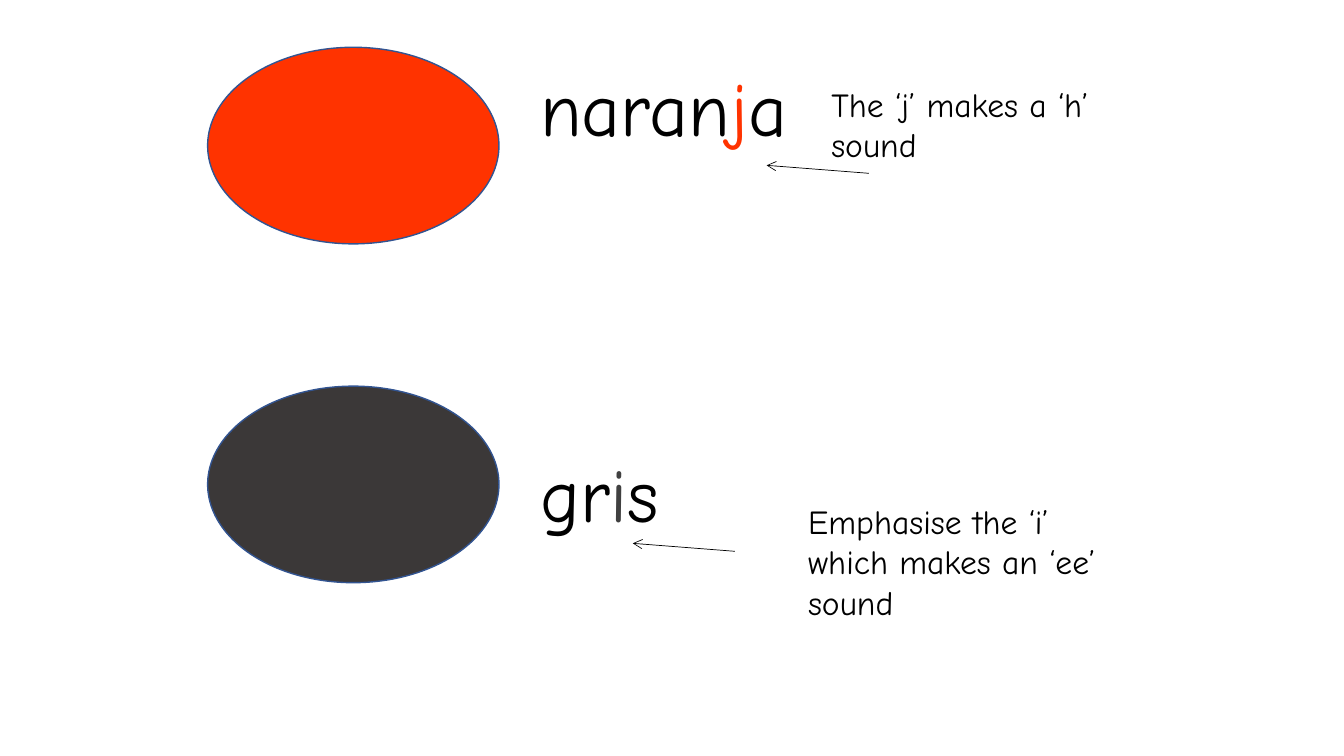
from lxml.etree import SubElement
from pptx import Presentation
from pptx.dml.color import RGBColor
from pptx.enum.shapes import MSO_CONNECTOR, MSO_SHAPE
from pptx.enum.text import MSO_AUTO_SIZE
from pptx.oxml.ns import qn
from pptx.util import Pt

FONT = "Comic Neue"
BLACK = "000000"
OUTLINE = "325491"

# Lengths in points; positions are (left, top), arrows start at their tail.
COLOURS = [
    {"fill": "FF3300", "oval_top": 33.8,
     "word": [("naran", BLACK), ("j", "FF3300"), ("a", BLACK)], "word_top": 39.6,
     "arrow": (620.6, 123.8),
     "hint": "The ‘j’ makes a ‘h’ sound", "hint_at": (586.8, 56.2), "hint_height": 65.5},
    {"fill": "3B3838", "oval_top": 275.8,
     "word": [("gr", BLACK), ("i", "404040"), ("s", BLACK)], "word_top": 315.4,
     "arrow": (525, 393.8),
     "hint": "Emphasise the ‘i’ which makes an ‘ee’ sound", "hint_at": (570.2, 354.2),
     "hint_height": 94.3},
]
OVAL_LEFT, OVAL_WIDTH, OVAL_HEIGHT = 148.3, 208.1, 140.4
WORD_LEFT, WORD_WIDTH, WORD_HEIGHT = 378.7, 224.6, 72.7
HINT_WIDTH = 230.4
ARROW_RUN, ARROW_RISE = 73, 5.7


def rgb(value):
    return RGBColor.from_string(value)


def add_oval(page, top, fill):
    oval = page.shapes.add_shape(
        MSO_SHAPE.OVAL, Pt(OVAL_LEFT), Pt(top), Pt(OVAL_WIDTH), Pt(OVAL_HEIGHT))
    oval.shadow.inherit = False
    oval.fill.solid()
    oval.fill.fore_color.rgb = rgb(fill)
    oval.line.color.rgb = rgb(OUTLINE)
    oval.line.width = Pt(1)


def add_text(page, left, top, width, height, size, spans):
    box = page.shapes.add_textbox(Pt(left), Pt(top), Pt(width), Pt(height))
    box.text_frame.word_wrap = True
    box.text_frame.auto_size = MSO_AUTO_SIZE.SHAPE_TO_FIT_TEXT
    para = box.text_frame.paragraphs[0]
    para.font.name = FONT
    para.font.size = Pt(size)
    for text, colour in spans:
        span = para.add_run()
        span.text = text
        span.font.color.rgb = rgb(colour)


def add_arrow(page, left, top):
    arrow = page.shapes.add_connector(
        MSO_CONNECTOR.STRAIGHT, Pt(left), Pt(top), Pt(left - ARROW_RUN), Pt(top - ARROW_RISE))
    arrow.line.color.rgb = rgb(BLACK)
    arrow.line.width = Pt(0.5)
    SubElement(arrow.line._get_or_add_ln(), qn("a:tailEnd"), type="arrow")
    SubElement(arrow._element.spPr, qn("a:effectLst"))


def main():
    deck = Presentation()
    deck.slide_width, deck.slide_height = Pt(960), Pt(540)
    page = deck.slides.add_slide(deck.slide_layouts[6])
    for colour in COLOURS:
        add_oval(page, colour["oval_top"], colour["fill"])
        add_text(page, WORD_LEFT, colour["word_top"], WORD_WIDTH, WORD_HEIGHT, 54,
                 colour["word"])
        add_arrow(page, *colour["arrow"])
        add_text(page, *colour["hint_at"], HINT_WIDTH, colour["hint_height"], 24,
                 [(colour["hint"], BLACK)])
    deck.save("out.pptx")


if __name__ == "__main__":
    main()
